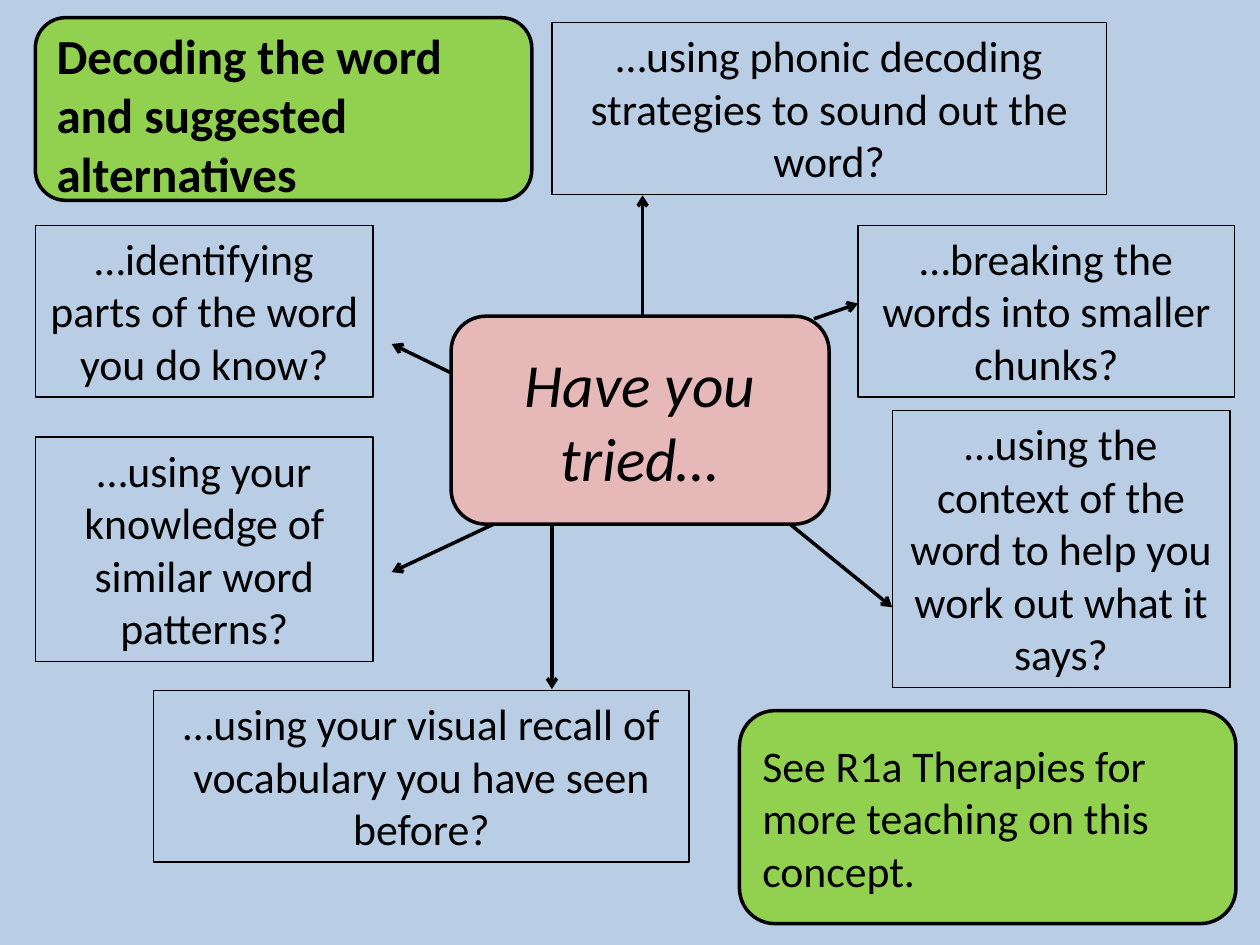
import pptx
import pptx.dml.color
import pptx.enum.shapes
import pptx.enum.text
import pptx.oxml.ns
import pptx.util
from lxml import etree

Pt = pptx.util.Pt
RGBColor = pptx.dml.color.RGBColor
SHAPES = pptx.enum.shapes.MSO_SHAPE
ALIGN = pptx.enum.text.PP_ALIGN
ANCHOR = pptx.enum.text.MSO_ANCHOR
qn = pptx.oxml.ns.qn

BLUE = RGBColor(0xB9, 0xCD, 0xE5)
GREEN = RGBColor(0x92, 0xD0, 0x50)
PINK = RGBColor(0xE6, 0xB9, 0xB8)
BLACK = RGBColor(0, 0, 0)

LEFT_EDGE = 20.2
PANEL_WIDTH = 283.7
SIDE_WIDTH = 193
UPPER_ROW = 128.9
THREE_LINES = 98
HUB_TOP, HUB_BOTTOM = 180.7, 299.5

# left, top, width, height, text
SUGGESTIONS = [
    (315.4, 13, 316.8, THREE_LINES,
     "…using phonic decoding strategies to sound out the word?"),
    (509.8, 234.7, SIDE_WIDTH, 158.4,
     "…using the context of the word to help you work out what it says?"),
    (LEFT_EDGE, UPPER_ROW, SIDE_WIDTH, THREE_LINES,
     "…identifying parts of the word you do know?"),
    (490.3, UPPER_ROW, 215.3, THREE_LINES,
     "…breaking the words into smaller chunks?"),
    (LEFT_EDGE, 249.8, SIDE_WIDTH, 128.2,
     "…using your knowledge of similar word patterns?"),
    (87.8, 394.6, 306, THREE_LINES,
     "…using your visual recall of vocabulary you have seen before?"),
]

# start x, start y, end x, end y
ARROWS = [
    (257.8, 213.1, 223.9, 196.6),
    (465.1, 182.2, 490.3, 173.5),
    (367.2, HUB_TOP, 367.2, 111.6),
    (451.4, HUB_BOTTOM, 509.8, 347),
    (315.4, HUB_BOTTOM, 315.4, 393.8),
    (282.2, HUB_BOTTOM, 223.9, 326.9),
]


def write_text(shape, text, size, alignment):
    shape.text_frame.word_wrap = True
    paragraph = shape.text_frame.paragraphs[0]
    paragraph.text = text
    paragraph.alignment = alignment
    paragraph.font.name = "Calibri"
    paragraph.font.size = Pt(size)
    paragraph.font.color.rgb = BLACK
    return paragraph


def set_outline(line, width):
    line.color.rgb = BLACK
    line.width = Pt(width)


def add_panel(slide, box, text, size, fill, alignment=ALIGN.LEFT):
    """Add a filled, rounded panel with vertically centred text."""
    shape = slide.shapes.add_shape(SHAPES.ROUNDED_RECTANGLE, *map(Pt, box))
    shape.shadow.inherit = False
    shape.fill.solid()
    shape.fill.fore_color.rgb = fill
    set_outline(shape.line, 2)
    shape.text_frame.vertical_anchor = ANCHOR.MIDDLE
    write_text(shape, text, size, alignment)
    return shape


def add_suggestion(slide, left, top, width, height, text):
    box = slide.shapes.add_textbox(Pt(left), Pt(top), Pt(width), Pt(height))
    set_outline(box.line, 0.75)
    write_text(box, text, 25, ALIGN.CENTER)


def add_arrow(slide, *ends):
    connector = slide.shapes.add_connector(
        pptx.enum.shapes.MSO_CONNECTOR.STRAIGHT, *map(Pt, ends))
    set_outline(connector.line, 2)
    properties = connector.line._get_or_add_ln()
    etree.SubElement(properties, qn("a:tailEnd"), type="arrow")
    etree.SubElement(connector._element.spPr, qn("a:effectLst"))


def main():
    presentation = pptx.Presentation()
    presentation.slide_width = Pt(720)
    presentation.slide_height = Pt(540)
    slide = presentation.slides.add_slide(presentation.slide_layouts[6])
    slide.background.fill.solid()
    slide.background.fill.fore_color.rgb = BLUE

    title = add_panel(slide, (LEFT_EDGE, 10.1, PANEL_WIDTH, 104.4),
                      "Decoding the word and suggested alternatives", 28, GREEN)
    title.text_frame.paragraphs[0].font.bold = True
    title.text_frame.margin_top = Pt(9)
    add_panel(slide, (422.6, 406.1, PANEL_WIDTH, 121.7),
              "See R1a Therapies for more teaching on this concept.", 25, GREEN)
    hub = add_panel(slide, (257.8, HUB_TOP, 216, HUB_BOTTOM - HUB_TOP),
                    "Have you tried…", 35, PINK, ALIGN.CENTER)
    hub.text_frame.paragraphs[0].font.italic = True

    for suggestion in SUGGESTIONS:
        add_suggestion(slide, *suggestion)
    for arrow in ARROWS:
        add_arrow(slide, *arrow)
    presentation.save("out.pptx")


if __name__ == "__main__":
    main()
